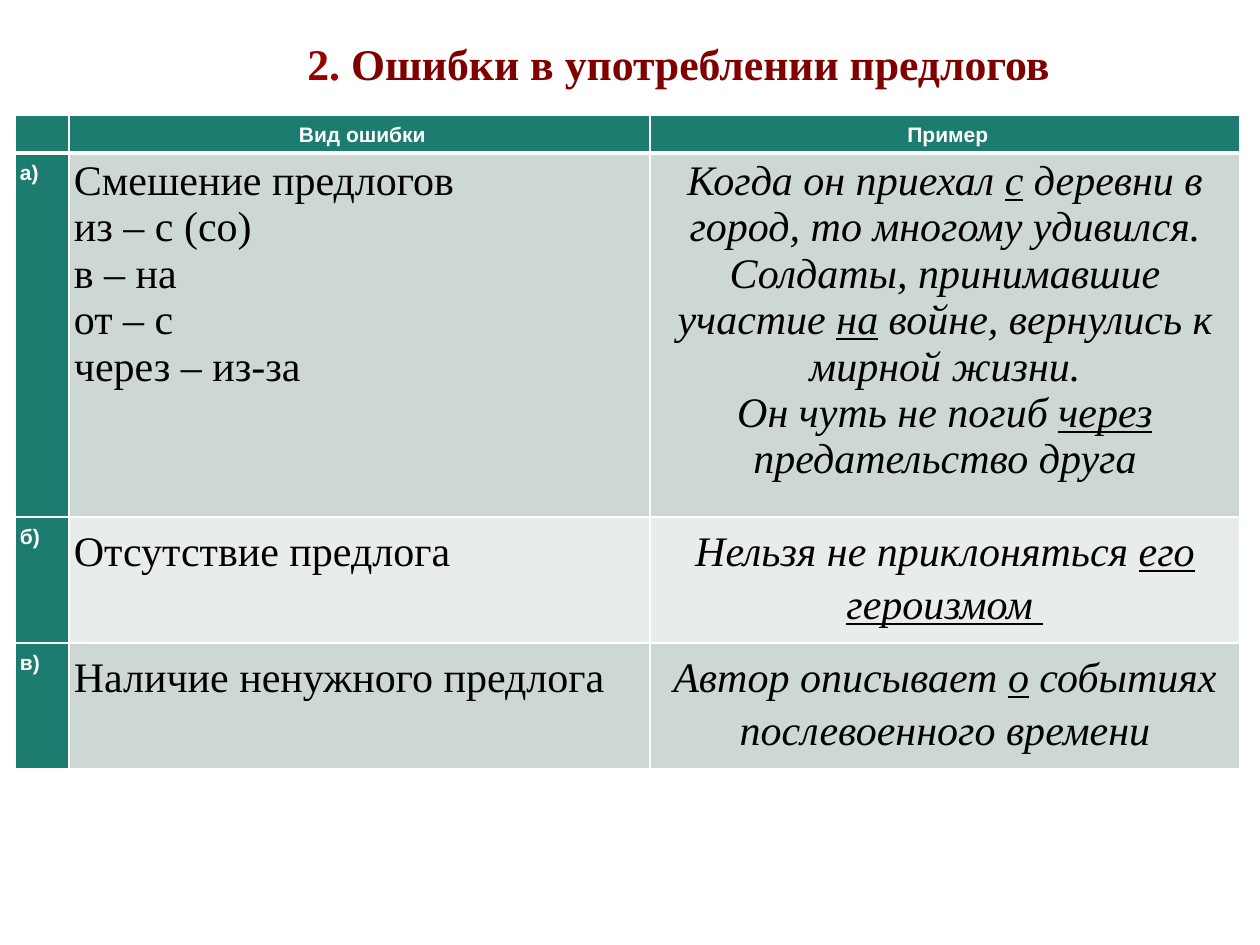
from dataclasses import dataclass

from lxml.etree import SubElement
from pptx import Presentation
from pptx.dml.color import RGBColor
from pptx.enum.text import MSO_ANCHOR, PP_ALIGN
from pptx.oxml.ns import qn
from pptx.util import Pt

PX = 914400 / 126
SERIF, SANS = "Times New Roman", "Arial"
TEAL, GREY, PALE, WHITE, BLACK = "1C7C70", "CDD7D5", "E8ECEB", "FFFFFF", "000000"
COLUMNS = (54, 581, 590)


@dataclass(frozen=True)
class Style:
    font: str
    size: int
    color: str
    bold: bool = False
    italic: bool = False
    align: PP_ALIGN = PP_ALIGN.LEFT


@dataclass(frozen=True)
class Row:
    height: int
    fill: str
    spacing: float
    cells: tuple[str, str, str]


HEADER = Style(SANS, 12, WHITE, bold=True, align=PP_ALIGN.CENTER)
LETTER = Style(SANS, 12, WHITE, bold=True)
KIND = Style(SERIF, 24, BLACK)
EXAMPLE = Style(SERIF, 24, BLACK, italic=True, align=PP_ALIGN.CENTER)

# In the texts, | starts a paragraph, a newline breaks a line, _ marks underlining.
ROWS = (
    Row(38, TEAL, 1.15, ("", " Вид ошибки", " Пример")),
    Row(364, GREY, 1.0, (
        "а)",
        "Смешение предлогов|из – с (со)\nв – на\nот – с\nчерез – из-за",
        "Когда он приехал _с_ деревни в город, то многому удивился."
        "|Солдаты, принимавшие участие _на_ войне, вернулись к мирной жизни."
        "|Он чуть не погиб _через_ предательство друга")),
    Row(126, PALE, 1.15, (
        "б)", "Отсутствие предлога", "Нельзя не приклоняться _его героизмом _")),
    Row(126, GREY, 1.15, (
        "в)", "Наличие ненужного предлога",
        "Автор описывает _о_ событиях послевоенного времени")),
)


def px(n: int) -> int:
    return round(n * PX)


def rgb(color: str) -> RGBColor:
    return RGBColor.from_string(color)


def format_run(r, style: Style, underline: bool = False) -> None:
    f = r.font
    f.name, f.size, f.bold, f.italic = style.font, Pt(style.size), style.bold, style.italic
    f.underline = underline
    f.color.rgb = rgb(style.color)


def write(tf, text: str, style: Style, spacing: float) -> None:
    for i, line in enumerate(text.split("|")):
        p = tf.add_paragraph() if i else tf.paragraphs[0]
        p.alignment = style.align
        p.line_spacing = spacing
        for j, part in enumerate(line.split("_")):
            for k, piece in enumerate(part.split("\n")):
                if k:
                    p.add_line_break()
                if piece:
                    r = p.add_run()
                    r.text = piece
                    format_run(r, style, underline=j % 2 == 1)
        if not line:
            SubElement(p._p, qn("a:endParaRPr"), sz=str(style.size * 100))


def add_borders(cell, top: int, bottom: int) -> None:
    """Draw white cell edges; the widths are in points."""
    tc_pr = cell._tc.get_or_add_tcPr()
    for side, width in (("L", 1), ("R", 1), ("T", top), ("B", bottom)):
        ln = SubElement(tc_pr, qn(f"a:ln{side}"), w=str(Pt(width)))
        fill = SubElement(ln, qn("a:solidFill"))
        SubElement(fill, qn("a:srgbClr"), val=WHITE)


def add_title(slide) -> None:
    sp = slide.shapes.title
    sp.left, sp.top, sp.width, sp.height = px(64), px(30), px(1142), px(66)
    tf = sp.text_frame
    tf.word_wrap = True
    tf.vertical_anchor = MSO_ANCHOR.MIDDLE
    p = tf.paragraphs[0]
    p.alignment = PP_ALIGN.CENTER
    p._p.get_or_add_pPr().set("marL", str(px(87)))
    for text, color in (("2. ", "990000"), ("Ошибки в употреблении предлогов", "800000")):
        r = p.add_run()
        r.text = text
        format_run(r, Style(SERIF, 25, color, bold=True))


def add_error_table(slide) -> None:
    height = sum(row.height for row in ROWS)
    table = slide.shapes.add_table(
        len(ROWS), len(COLUMNS), px(15), px(115), px(sum(COLUMNS)), px(height)).table
    for column, width in zip(table.columns, COLUMNS):
        column.width = px(width)
    for i, row in enumerate(ROWS):
        table.rows[i].height = px(row.height)
        for j, text in enumerate(row.cells):
            cell = table.cell(i, j)
            cell.margin_left = cell.margin_right = px(5)
            cell.margin_top = cell.margin_bottom = px(5)
            add_borders(cell, top=3 if i == 1 else 1, bottom=3 if i == 0 else 1)
            cell.fill.solid()
            cell.fill.fore_color.rgb = rgb(TEAL if j == 0 else row.fill)
            style = HEADER if i == 0 else (LETTER, KIND, EXAMPLE)[j]
            write(cell.text_frame, text, style, 1.15 if j == 0 else row.spacing)


def main() -> None:
    prs = Presentation()
    prs.slide_width, prs.slide_height = px(1260), px(945)
    slide = prs.slides.add_slide(prs.slide_layouts[5])
    add_title(slide)
    add_error_table(slide)
    prs.save("out.pptx")


if __name__ == "__main__":
    main()
